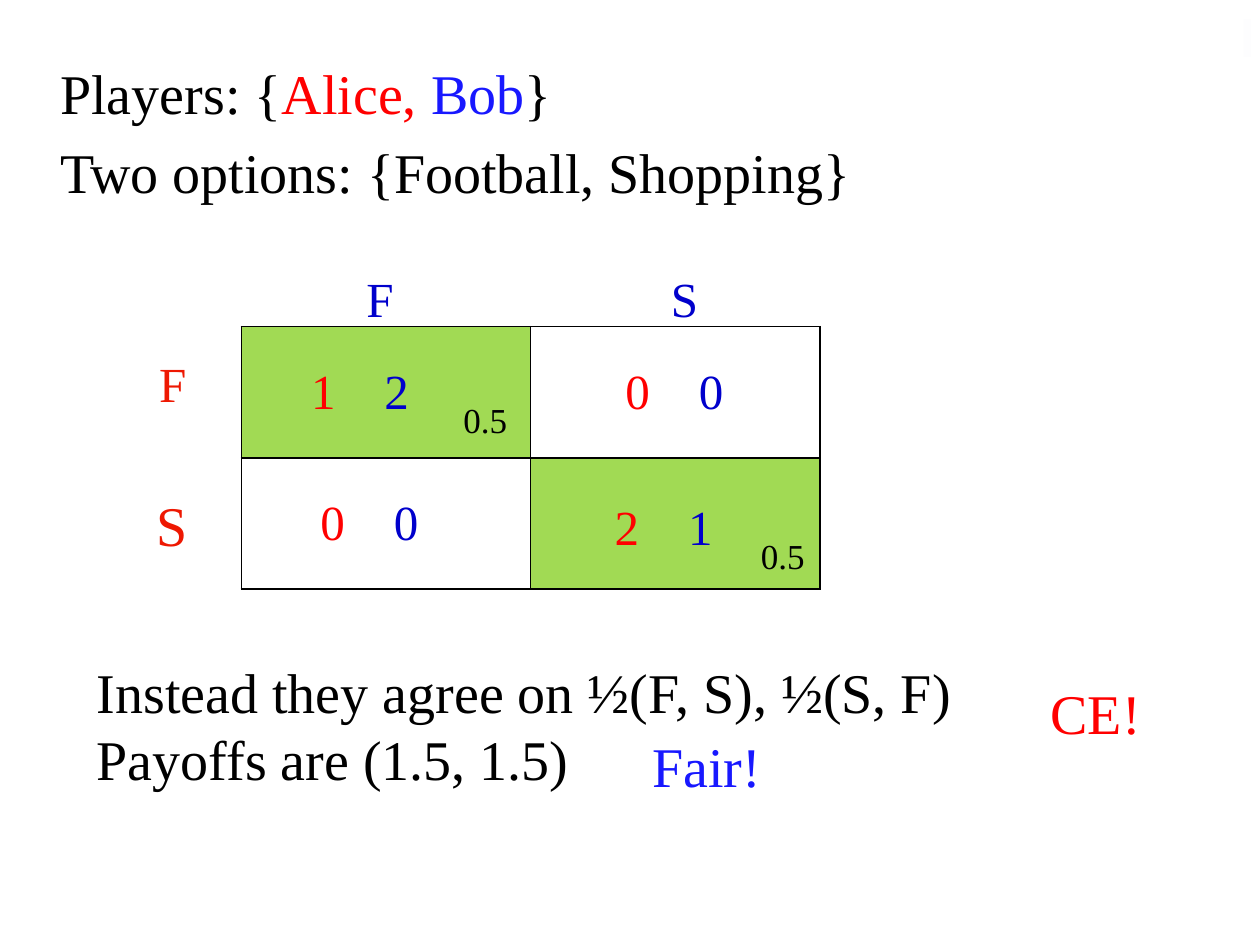
from lxml import etree
from pptx import Presentation
from pptx import util as u
from pptx.dml.color import RGBColor
from pptx.enum import shapes
from pptx.oxml import ns

COLOURS = {"black": "000000", "white": "FFFFFF", "red": "FF0000", "blue": "1818FF",
           "row": "EE1802", "column": "0000CC", "agreed": "A1DA54", "band": "00007D"}
COLUMNS, ROWS = 100, 75


class GameSlide:
    """Style and current slide; lengths are columns and rows of the grid."""
    font = "Times New Roman"

    def __init__(self, presentation):
        self.column = presentation.slide_width / COLUMNS
        self.row = presentation.slide_height / ROWS
        self.slide = presentation.slides.add_slide(presentation.slide_layouts[6])

    def place(self, left, top, width, height):
        return (round(left * self.column), round(top * self.row),
                round(width * self.column), round(height * self.row))

    def panel(self, box, *colours):
        """A plain rectangle; two colours make a gradient from left to right."""
        shape = self.slide.shapes.add_shape(shapes.MSO_SHAPE.RECTANGLE, *self.place(*box))
        shape.shadow.inherit = False
        shape.line.fill.background()
        if len(colours) == 1:
            shape.fill.solid()
            shape.fill.fore_color.rgb = RGBColor.from_string(COLOURS[colours[0]])
            return
        shape.fill.gradient()
        shape.fill.gradient_angle = 0
        for stop, colour in zip(shape.fill.gradient_stops, colours):
            stop.color.rgb = RGBColor.from_string(COLOURS[colour])

    def text(self, box, paragraphs, size=32, wrap=False, gap=0):
        """Each paragraph is a list of (wording, colour) runs."""
        shape = self.slide.shapes.add_textbox(*self.place(*box))
        frame = shape.text_frame
        frame.word_wrap = wrap
        for number, runs in enumerate(paragraphs):
            paragraph = frame.paragraphs[0]
            if number:
                paragraph = frame.add_paragraph()
                paragraph.space_before = u.Pt(gap)
            for wording, colour in runs:
                run = paragraph.add_run()
                run.text = wording
                run.font.name = self.font
                run.font.size = u.Pt(size)
                run.font.color.rgb = RGBColor.from_string(COLOURS[colour])
        return frame

    def payoffs(self, left, top, alice, bob):
        frame = self.text((left, top, 9.9, 5.7),
                          [[(alice, "red"), ("\t" + bob, "column")]], 28, wrap=True)
        properties = frame.paragraphs[0]._p.get_or_add_pPr()
        stops = etree.SubElement(properties, ns.qn("a:tabLst"))
        etree.SubElement(stops, ns.qn("a:tab"), pos=str(round(5.83 * self.column)), algn="l")

    def matrix(self, box, agreed):
        table = self.slide.shapes.add_table(2, 2, *self.place(*box)).table
        table.first_row = table.horz_banding = False
        for row in range(2):
            for column in range(2):
                cell = table.cell(row, column)
                self.borders(cell)
                if (row, column) in agreed:
                    cell.fill.solid()
                    cell.fill.fore_color.rgb = RGBColor.from_string(COLOURS["agreed"])
                else:
                    cell.fill.background()

    def borders(self, cell):
        properties = cell._tc.get_or_add_tcPr()
        for side in ("a:lnL", "a:lnR", "a:lnT", "a:lnB"):
            line = etree.SubElement(properties, ns.qn(side), w=str(u.Pt(1)))
            fill = etree.SubElement(line, ns.qn("a:solidFill"))
            etree.SubElement(fill, ns.qn("a:srgbClr"), val=COLOURS["black"])


def main():
    presentation = Presentation()
    presentation.slide_width, presentation.slide_height = u.Inches(10), u.Inches(7.5)
    game = GameSlide(presentation)

    # Fading band, of which only the pale right end shows beside the panel
    game.panel((4.5, 1.5, 95.5, 3), "band", "white")
    game.panel((0, 0, 98.7, 8.1), "white")

    # Players and their options
    game.text((3.8, 4.15, 91.7, 50.3), [
        [("Players: {", "black"), ("Alice,", "red"), (" Bob", "blue"), ("}", "black")],
        [("Two options: {Football, Shopping}", "black")],
    ], wrap=True, gap=7)

    # Payoff matrix with the agreed outcomes shaded
    game.matrix((19.15, 25.92, 45.95, 20.83), agreed=[(0, 0), (1, 1)])

    # Strategy labels: Alice picks the row, Bob the column
    for left, top, strategy, colour, size in [
            (11.65, 27.6, "F", "row", 28), (11.4, 38.4, "S", "row", 32),
            (28.1, 20.8, "F", "column", 28), (52.25, 20.8, "S", "column", 28)]:
        game.text((left, top, 4.2, 5.7), [[(strategy, colour)]], size)

    # Payoffs of Alice and Bob
    for left, top, alice, bob in [(23.7, 28.1, "1", "2"), (48.65, 28.1, "0", "0"),
                                  (24.45, 38.5, "0", "0"), (47.8, 38.9, "2", "1")]:
        game.payoffs(left, top, alice, bob)

    # Probabilities of the agreed outcomes
    for left, top in [(35.8, 31.1), (59.4, 41.9)]:
        game.text((left, top, 5.5, 4.4), [[("0.5", "black")]], 20)

    # Agreement and verdicts
    game.text((6.7, 51.7, 71.6, 11.8), [
        [("Instead they agree on ½(F, S), ½(S, F)", "black")],
        [("Payoffs are (1.5, 1.5)", "black")]])
    game.text((50.8, 57.6, 10.7, 6.4), [[("Fair!", "blue")]])
    game.text((82.4, 53.35, 9.2, 6.4), [[("CE!", "red")]])

    presentation.save("out.pptx")


if __name__ == "__main__":
    main()
